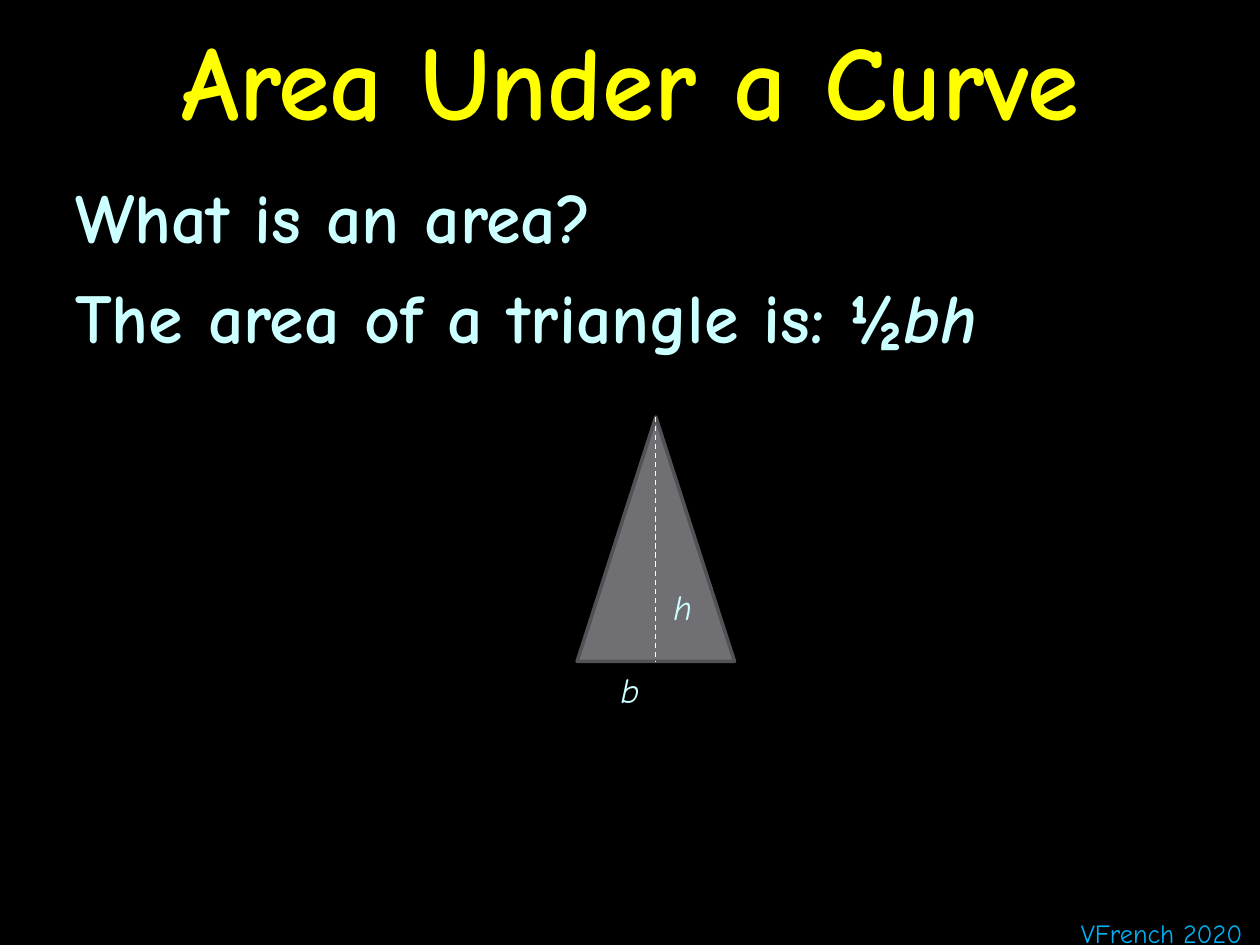
from dataclasses import dataclass

from lxml import etree
from pptx import Presentation, util as u
from pptx.dml.color import RGBColor
from pptx.enum import dml, shapes, text
from pptx.oxml.ns import qn

FONT = "Comic Neue"
PALE = "CCFFFF"


@dataclass
class Label:
    box: tuple[float, float, float, float]
    paragraphs: list[list[tuple[str, dict]]]  # paragraphs of (text, extra format)
    size: float
    color: str = PALE
    fmt: dict | None = None
    align: text.PP_ALIGN = text.PP_ALIGN.LEFT
    anchor: text.MSO_ANCHOR = text.MSO_ANCHOR.TOP
    space_before: float = 0
    wrap: bool = True
    grow: bool = False


def rgb(value: str) -> RGBColor:
    return RGBColor.from_string(value)


def add_label(s, label: Label) -> None:
    tf = s.shapes.add_textbox(*map(u.Inches, label.box)).text_frame
    tf.word_wrap = label.wrap
    tf.vertical_anchor = label.anchor
    tf.auto_size = (text.MSO_AUTO_SIZE.SHAPE_TO_FIT_TEXT if label.grow
                    else text.MSO_AUTO_SIZE.NONE)
    for i, runs in enumerate(label.paragraphs):
        p = tf.add_paragraph() if i else tf.paragraphs[0]
        p.alignment = label.align
        p.space_before = u.Pt(label.space_before)
        for words, extra in runs:
            r = p.add_run()
            r.text = words
            r.font.color.rgb = rgb(label.color)
            fmt = {"name": FONT, "size": u.Pt(label.size), **(label.fmt or {}), **extra}
            for key, value in fmt.items():
                setattr(r.font, key, value)


def side_label(letter: str, left: float, top: float) -> Label:
    return Label((left, top, 0.5, 0.44), [[(letter, {})]], 20, fmt={"italic": True},
                 align=text.PP_ALIGN.CENTER, grow=True)


def add_triangle(s, left: float, top: float, width: float, height: float) -> None:
    sp = s.shapes.add_shape(shapes.MSO_SHAPE.ISOSCELES_TRIANGLE,
                            *map(u.Inches, (left, top, width, height)))
    sp.shadow.inherit = False
    sp.fill.solid()
    sp.fill.fore_color.rgb = rgb("6F6F74")
    sp.line.color.rgb = rgb("525256")
    sp.line.width = u.Pt(2)


def add_height_line(s, x: float, top: float, bottom: float) -> None:
    line = s.shapes.add_connector(shapes.MSO_CONNECTOR.STRAIGHT,
                                  *map(u.Inches, (x, top, x, bottom)))
    line.line.color.rgb = rgb("FFFFFF")
    line.line.width = u.Pt(0.75)
    line.line.dash_style = dml.MSO_LINE.DASH
    etree.SubElement(line._element.spPr, qn("a:effectLst"))


def main() -> None:
    prs = Presentation()
    prs.slide_width, prs.slide_height = u.Inches(10), u.Inches(7.5)
    s = prs.slides.add_slide(prs.slide_layouts[6])
    s.background.fill.solid()
    s.background.fill.fore_color.rgb = rgb("000000")

    # Title and body
    bold = {"bold": True}
    add_label(s, Label((0, 0, 10, 1.25), [[("Area Under a Curve", {})]], 60, "FFFF00",
                       bold, text.PP_ALIGN.CENTER, text.MSO_ANCHOR.MIDDLE))
    add_label(s, Label((0.5, 1.33, 9, 6.17),
                       [[("What is an area?", {})],
                        [("The area of a triangle is: ½", {}), ("bh", {"italic": True})]],
                       40, fmt=bold, space_before=9))

    # Triangle with its base and height
    left, top, width, height = 4.58, 3.31, 1.25, 1.94
    add_label(s, side_label("b", 4.75, 5.26))
    add_triangle(s, left, top, width, height)
    add_label(s, side_label("h", 5.17, 4.6))
    add_height_line(s, left + width / 2, top, top + height)

    # Footer
    add_label(s, Label((8.48, 7.23, 1.63, 0.35), [[("VFrench 2020", {})]], 15, "00B0F0",
                       wrap=False, grow=True))

    prs.save("out.pptx")


if __name__ == "__main__":
    main()
